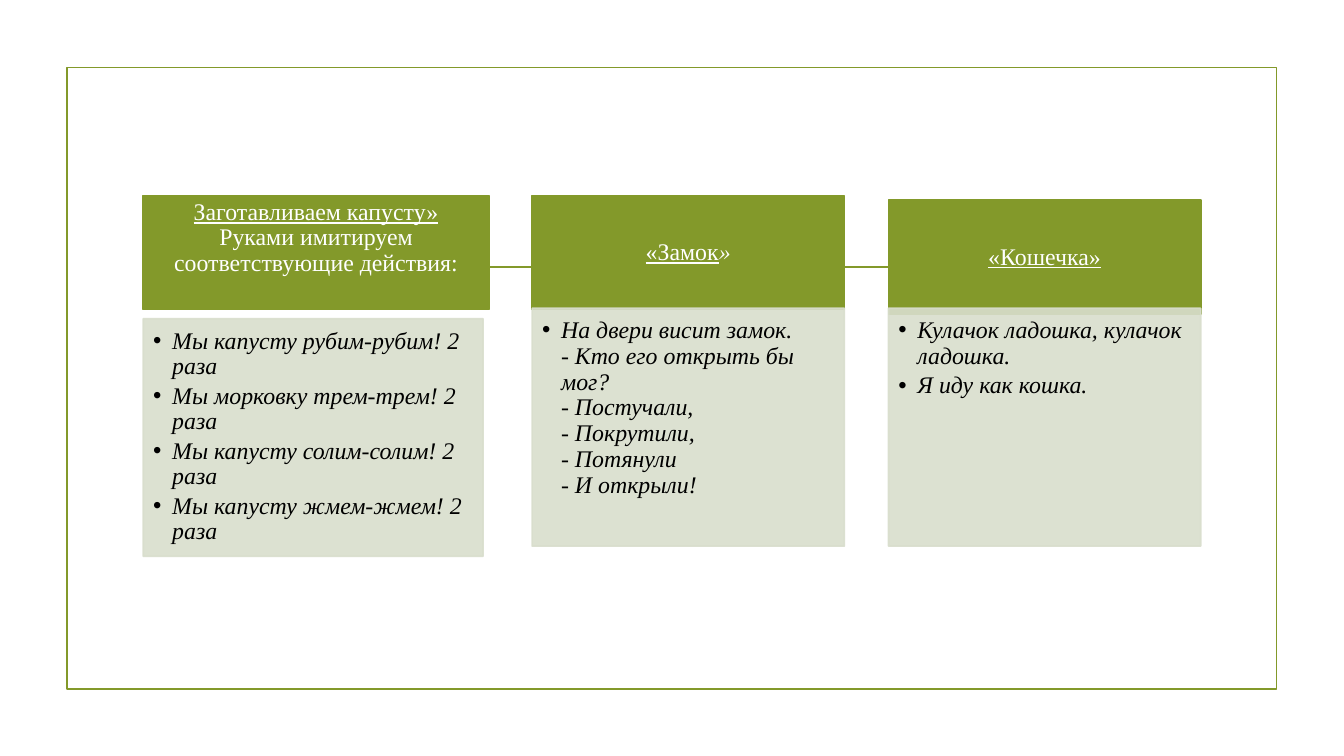
"""Build a slide of three finger games joined by a line inside a frame."""
from copy import deepcopy
from dataclasses import dataclass

from lxml.etree import SubElement
from pptx import Presentation
from pptx.dml.color import RGBColor
from pptx.dml.fill import FillFormat
from pptx.enum.shapes import MSO_CONNECTOR, MSO_SHAPE
from pptx.enum.text import MSO_ANCHOR, MSO_AUTO_SIZE, PP_ALIGN
from pptx.oxml.ns import qn
from pptx.shapes.base import BaseShape
from pptx.slide import Slide
from pptx.text.text import TextFrame
from pptx.util import Cm, Pt

GREEN, PALE, WHITE, BLACK = "83992A", "D9DECD", "FFFFFF", "000000"
BORDER = Pt(1.25)
HEADING_HEIGHT, LIST_HEIGHT = 2.87, 5.99


@dataclass(frozen=True)
class Piece:
    """A stretch of text with its own emphasis."""
    text: str
    underline: bool = False
    italic: bool = False


@dataclass(frozen=True)
class Game:
    """A finger game: its heading, its verses and their places in cm."""
    heading: list[Piece]
    verses: list[str]
    left: float
    heading_top: float
    heading_width: float
    list_top: float
    list_width: float


GAMES = [
    Game([Piece("Заготавливаем капусту» ", underline=True),
          Piece("Руками имитируем соответствующие действия:\n")],
         [f"Мы {action}! 2 раза" for action in (
             "капусту рубим-рубим", "морковку трем-трем",
             "капусту солим-солим", "капусту жмем-жмем")],
         3.61, 4.93, 8.71, 8.03, 8.56),
    Game([Piece("«Замок", underline=True), Piece("»", italic=True)],
         ["На двери висит замок.\n- Кто его открыть бы мог?\n- Постучали,\n"
          "- Покрутили,\n- Потянули\n- И открыли!"],
         13.41, 4.93, 7.87, 7.77, 7.87),
    Game([Piece("«Кошечка»", underline=True)],
         ["Кулачок ладошка, кулачок ладошка.", "Я иду как кошка."],
         22.39, 5.05, 7.87, 7.77, 7.87),
]


def paint(fill: FillFormat, colour: str, opacity: int = 100) -> None:
    """Make a fill solid, with opacity in percent."""
    fill.solid()
    fill.fore_color.rgb = RGBColor.from_string(colour)
    if opacity < 100:
        tint = fill._xPr.find(qn("a:solidFill"))[0]
        SubElement(tint, qn("a:alpha"), val=str(opacity * 1000))


def outline(shape: BaseShape, colour: str, opacity: int = 100) -> None:
    """Draw the border of a shape or the stroke of a connector."""
    paint(shape.line.fill, colour, opacity)
    shape.line.width = BORDER


def write(frame: TextFrame, paragraphs: list[list[Piece]], *, colour: str,
          align: PP_ALIGN, anchor: MSO_ANCHOR, insets: tuple[float, ...],
          after: float, bullet: bool = False) -> None:
    """Fill a frame with formatted paragraphs."""
    frame.word_wrap = True
    frame.auto_size = MSO_AUTO_SIZE.NONE
    frame.vertical_anchor = anchor
    (frame.margin_left, frame.margin_top,
     frame.margin_right, frame.margin_bottom) = map(Cm, insets)
    for number, pieces in enumerate(paragraphs):
        paragraph = frame.add_paragraph() if number else frame.paragraphs[0]
        if bullet:
            properties = paragraph._p.get_or_add_pPr()
            properties.set("marL", str(Cm(0.48)))
            properties.set("indent", str(-Cm(0.48)))
            SubElement(properties, qn("a:buChar"), char="•")
        paragraph.alignment = align
        paragraph.line_spacing = 0.9
        paragraph.space_before = Pt(0)
        paragraph.space_after = Pt(after)
        for piece in pieces:
            for row, line in enumerate(piece.text.split("\n")):
                if row:
                    paragraph.add_line_break()
                    paragraph._p[-1].append(deepcopy(run._r.rPr))
                if not line:
                    continue
                run = paragraph.add_run()
                run.text = line
                run.font.name = "Times New Roman"
                run.font.size = Pt(17)
                run.font.bold = False
                run.font.italic = piece.italic
                run.font.underline = piece.underline
                paint(run.font.fill, colour)


def add_backdrop(slide: Slide) -> None:
    """Draw the frame and the line that joins the games."""
    frame = slide.shapes.add_shape(
        MSO_SHAPE.RECTANGLE, Cm(1.69), Cm(1.7), Cm(30.48), Cm(15.67))
    frame.shadow.inherit = False
    frame.fill.background()
    outline(frame, GREEN)
    link = slide.shapes.add_connector(
        MSO_CONNECTOR.STRAIGHT, Cm(3.89), Cm(6.73), Cm(30), Cm(6.73))
    outline(link, GREEN)
    SubElement(link._element.spPr, qn("a:effectLst"))


def add_game(slide: Slide, game: Game, verses: BaseShape) -> None:
    """Draw a heading and lay the placeholder with its verses over it."""
    heading = slide.shapes.add_shape(
        MSO_SHAPE.RECTANGLE, Cm(game.left), Cm(game.heading_top),
        Cm(game.heading_width), Cm(HEADING_HEIGHT))
    heading.shadow.inherit = False
    paint(heading.fill, GREEN)
    outline(heading, GREEN)
    write(heading.text_frame, [game.heading], colour=WHITE,
          align=PP_ALIGN.CENTER, anchor=MSO_ANCHOR.MIDDLE,
          insets=(0.33, 0.2, 0.33, 0.2), after=6)

    verses.left, verses.top = Cm(game.left), Cm(game.list_top)
    verses.width, verses.height = Cm(game.list_width), Cm(LIST_HEIGHT)
    paint(verses.fill, PALE, 90)
    outline(verses, PALE, 90)
    write(verses.text_frame,
          [[Piece(verse, italic=True)] for verse in game.verses],
          colour=BLACK, align=PP_ALIGN.LEFT, anchor=MSO_ANCHOR.TOP,
          insets=(0.25, 0.25, 0.33, 0.38), after=2.55, bullet=True)
    slide.shapes._spTree.append(verses._element)


def main() -> None:
    """Build and save the presentation."""
    presentation = Presentation()
    presentation.slide_width, presentation.slide_height = Cm(33.87), Cm(19.05)
    slide = presentation.slides.add_slide(presentation.slide_layouts[4])
    title, *bodies = slide.placeholders
    for unused in (title, *bodies[len(GAMES):]):
        slide.shapes._spTree.remove(unused._element)
    add_backdrop(slide)
    for game, verses in zip(GAMES, bodies):
        add_game(slide, game, verses)
    presentation.save("out.pptx")


if __name__ == "__main__":
    main()
